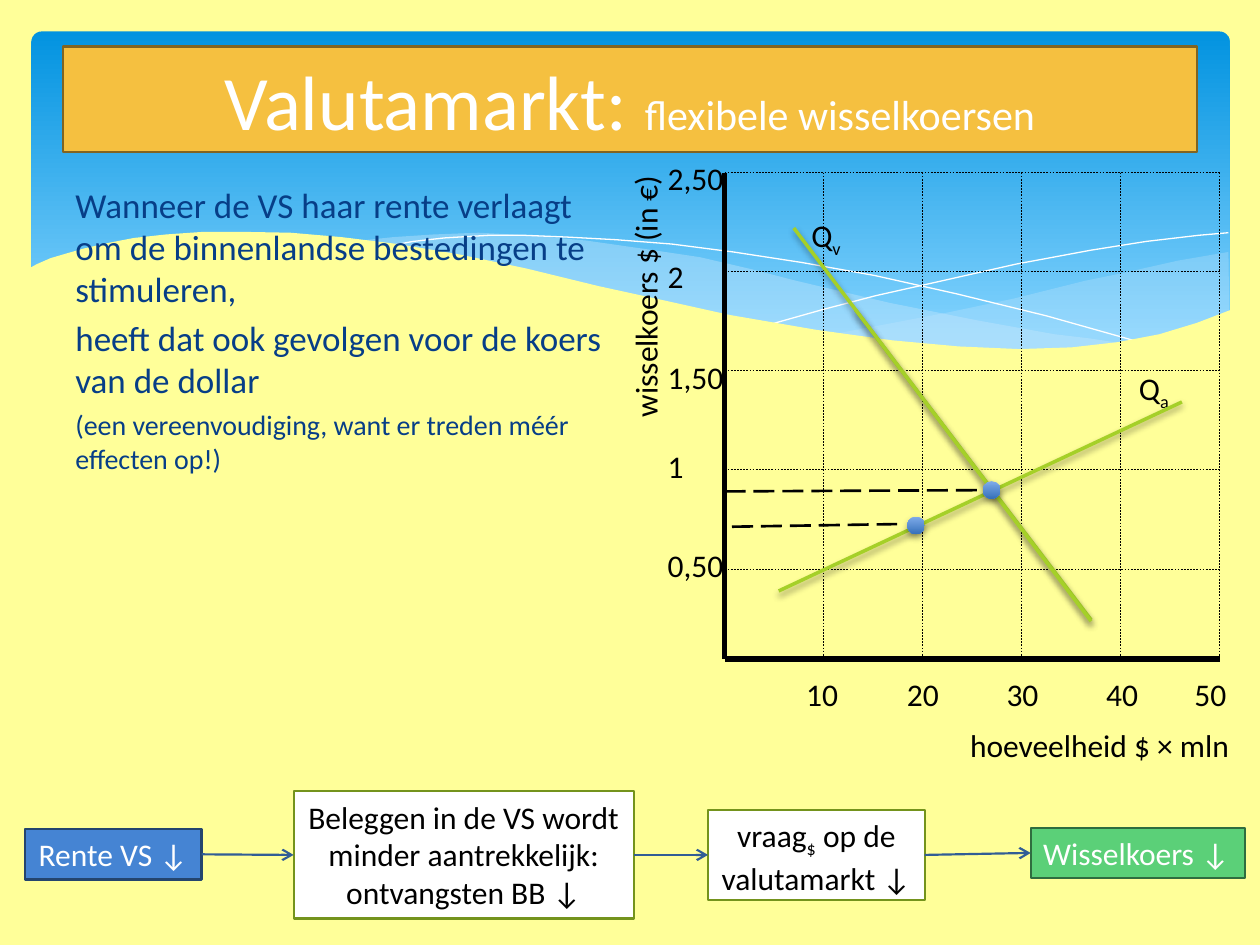
from pptx import Presentation
from pptx.util import Pt
from pptx.dml.color import RGBColor
from pptx.enum import dml, shapes, text
from pptx.oxml import ns
from lxml import etree


class Theme:
    font = "Calibri"
    back, sky, pale, mist = "FFFF99", "0293E0", "83D3FE", "C6E7FC"
    gold, brown, navy = "F5C040", "806421", "073E87"
    black, white, lime, olive = "000000", "FFFFFF", "A5D028", "74931C"
    blue, ink, green, moss = "4584D3", "24456E", "5BD078", "2F6D3F"
    arrow, light, deep = "315D95", "80ACEA", "3570BA"
    head, sub, body, label, note = 44, 24, 20, 18, 16


def write(shape, paras, size=Theme.label, color=Theme.black, align="LEFT", space=0,
          wrap=False, fit=True, anchor="TOP"):
    frame = shape.text_frame
    frame.word_wrap = wrap
    frame.auto_size = text.MSO_AUTO_SIZE.SHAPE_TO_FIT_TEXT if fit else text.MSO_AUTO_SIZE.NONE
    frame.vertical_anchor = getattr(text.MSO_ANCHOR, anchor)
    for i, runs in enumerate(paras):
        para = frame.add_paragraph() if i else frame.paragraphs[0]
        para.alignment = getattr(text.PP_ALIGN, align)
        para.space_before = Pt(space if i else 0)
        for part in [runs] if isinstance(runs, str) else runs:
            words, opts = (part, {}) if isinstance(part, str) else part
            run = para.add_run()
            run.text = words
            run.font.name = Theme.font
            run.font.size = Pt(opts.get("size", size))
            run.font.color.rgb = RGBColor.from_string(color)
            if "base" in opts:
                run._r.get_or_add_rPr().set("baseline", str(opts["base"] * 1000))


def stroke(start, end, color, width, dash=None):
    line = slide.shapes.add_connector(shapes.MSO_CONNECTOR.STRAIGHT, *map(Pt, start + end))
    line.line.color.rgb = RGBColor.from_string(color)
    line.line.width = Pt(width)
    if dash:
        line.line.dash_style = dash
    etree.SubElement(line.element.spPr, ns.qn("a:effectLst"))
    return line


deck = Presentation()
deck.slide_width, deck.slide_height = Pt(720), Pt(540)
slide = deck.slides.add_slide(deck.slide_layouts[5])
slide.background.fill.solid()
slide.background.fill.fore_color.rgb = RGBColor.from_string(Theme.back)

sky = slide.shapes.add_shape(shapes.MSO_SHAPE.ROUNDED_RECTANGLE, Pt(18), Pt(18), Pt(684.7), Pt(194.4))
sky.adjustments[0] = 0.03
sky.shadow.inherit = False
sky.line.fill.background()
sky.fill.gradient()
sky.fill.gradient_angle = 270
for stop, color, place in zip(sky.fill.gradient_stops, (Theme.sky, Theme.pale), (0, 0.9)):
    stop.color.rgb = RGBColor.from_string(color)
    stop.position = place

waves = [
    (Theme.mist, 29, [
        (702, 144), (673, 149), (642, 156), (620, 160.5), (580, 170.5), (542, 178.5), (508, 185),
        (476, 191), (497, 193.5), (527, 197), (554, 199), (578, 200), (601, 199.5), (621, 198),
        (640, 196), (657, 193), (673, 189.5), (683, 186.5), (693, 181.5), (702.5, 178)]),
    (Theme.mist, 40, [
        (643, 196.5), (623.5, 193.5), (602.5, 191), (558, 183), (508, 173), (453, 160), (430, 154),
        (400, 147), (370, 142.5), (335, 137.5), (302, 134.5), (273.5, 133), (248, 134),
        (225, 135.5), (206, 137.5), (233, 141), (261, 146), (291, 152), (323, 160), (353.5, 167),
        (381.5, 173), (420.5, 181), (456.5, 188), (490, 193), (521, 197), (548, 199.5),
        (573, 200), (596, 200), (617, 199.5), (637, 197.5)]),
    (None, 0, [
        (222.5, 140.5), (236, 138), (254, 136), (279, 134.5), (300, 134.5), (324, 135.5),
        (352, 137), (384, 139.5), (419, 144), (458, 150), (500, 157.5), (547, 168),
        (598, 180.5), (653, 196)]),
    (None, 0, [
        (441.5, 185), (470, 177), (500.5, 169), (538.5, 160.5), (580.5, 151), (623.5, 143),
        (655, 138), (685, 134.5), (702, 133)]),
    (Theme.back, 100, [
        (703.5, 177), (684, 184.5), (662.5, 191), (639, 195.5), (612.5, 198.5), (582.5, 199.5),
        (548, 198), (510, 194.5), (466.5, 188.5), (417, 180), (381, 172), (342, 163.5),
        (301, 153.5), (263, 145.5), (227.5, 139.5), (195, 135.5), (166, 133), (139, 132.5),
        (116, 132.5), (95, 134), (76.5, 136), (61, 139), (48, 142), (37.5, 145), (29, 147.5),
        (21, 151), (16.5, 153.5), (16.5, 237), (703.5, 237)]),
]
for color, alpha, spots in waves:
    spots = [(Pt(x), Pt(y)) for x, y in spots]
    pen = slide.shapes.build_freeform(*spots[0])
    pen.add_line_segments(spots[1:], close=bool(color))
    wave = pen.convert_to_shape()
    wave.shadow.inherit = False
    if color:
        wave.line.fill.background()
        wave.fill.solid()
        wave.fill.fore_color.rgb = RGBColor.from_string(color)
        tint = wave.element.spPr.find(ns.qn("a:solidFill"))[0]
        etree.SubElement(tint, ns.qn("a:alpha"), val=str(alpha * 1000))
    else:
        wave.fill.background()
        wave.line.color.rgb = RGBColor.from_string(Theme.white)
        wave.line.width = Pt(0)

title = slide.shapes.title
slide.shapes.element.append(title.element)
title.left, title.top, title.width, title.height = Pt(36), Pt(26.6), Pt(648), Pt(60.5)
title.fill.solid()
title.fill.fore_color.rgb = RGBColor.from_string(Theme.gold)
title.line.color.rgb = RGBColor.from_string(Theme.brown)
title.line.width = Pt(1.25)
write(title, [["Valutamarkt: ", ("flexibele wisselkoersen", {"size": Theme.sub})]],
      size=Theme.head, color=Theme.white, align="CENTER", wrap=True, fit=False, anchor="MIDDLE")

story = slide.shapes.add_textbox(Pt(36), Pt(101.5), Pt(318.2), Pt(339))
write(story, ["Wanneer de VS haar rente verlaagt om de binnenlandse bestedingen te stimuleren,",
              "heeft dat ook gevolgen voor de koers van de dollar",
              [("(een vereenvoudiging, want er treden méér effecten op!)", {"size": Theme.note})]],
      size=Theme.body, color=Theme.navy, space=4, wrap=True, fit=False)

left, right, top, base, step = 414, 697, 98.6, 376.6, 56.6
stroke((left, top), (left, base), Theme.black, 3)
stroke((right, base), (left, base), Theme.black, 3)
for i in range(5):
    y, x = top + i * step, left + (i + 1) * step
    stroke((left, y), (right, y), Theme.black, 0.25, dml.MSO_LINE.DASH)
    stroke((x, top), (x, base), Theme.black, 0.25, dml.MSO_LINE.DASH)

labels = [("hoeveelheid $ × mln", 547.2, 411.1, 164.9, 0),
          ("wisselkoers $ (in €)", 291.6, 154.1, 154.1, 270),
          (["Q", ("v", {"base": -25})], 456.5, 120.2, 32.4, 0),
          (["Q", ("a", {"base": -25})], 643.7, 207.4, 32.4, 0)]
labels += [(word, 374.4, y, 46.8 if "," in word else 23.8, 0) for word, y in
           zip(("2,50", "2", "1,50", "1", "0,50"), (87.1, 143.3, 200.9, 252, 308.2))]
labels += [(str(10 * i), x, 382.3, 33.1, 0) for i, x in
           enumerate((453.6, 511.2, 568.1, 625, 675.4), 1)]
for words, x, y, width, turn in labels:
    label = slide.shapes.add_textbox(Pt(x), Pt(y), Pt(width), Pt(28.8))
    label.rotation = turn
    write(label, [words])

steps = [
    (14.4, 473.8, 100.8, 28.8, Theme.blue, Theme.ink, Theme.white, "CENTER", ["Rente VS ↓"]),
    (167.8, 452.2, 194.4, 72.7, Theme.white, Theme.olive, Theme.black, "CENTER",
     ["Beleggen in de VS wordt", "minder aantrekkelijk:", "ontvangsten BB ↓"]),
    (404.6, 463, 123.8, 51.1, Theme.white, Theme.olive, Theme.black, "CENTER",
     [["vraag", ("$", {"base": -25}), " op de"], "valutamarkt ↓"]),
    (589, 473, 122.4, 28.8, Theme.green, Theme.moss, Theme.white, "LEFT", ["Wisselkoers ↓"]),
]
last = None
for x, y, width, height, fill, edge, color, align, paras in steps:
    box = slide.shapes.add_shape(shapes.MSO_SHAPE.RECTANGLE, Pt(x), Pt(y), Pt(width), Pt(height))
    box.shadow.inherit = False
    box.fill.solid()
    box.fill.fore_color.rgb = RGBColor.from_string(fill)
    box.line.color.rgb = RGBColor.from_string(edge)
    box.line.width = Pt(1.25)
    write(box, paras, color=color, align=align)
    if last:
        link = stroke((0, 0), (0, 0), Theme.arrow, 1.25)
        link.begin_connect(last, 3)
        link.end_connect(box, 1)
        etree.SubElement(link.line._get_or_add_ln(), ns.qn("a:tailEnd"), type="arrow")
    last = box

raised = [stroke(start, end, Theme.lime, 2) for start, end in (
    ((445, 337.7), (675.4, 229.7)),
    ((488.9, 177.1), (623.5, 354.2)),
    ((453.6, 130.3), (623.5, 355)))]
for start, end in (((414, 280.8), (558.7, 280.1)), ((418.3, 301), (512.6, 299.5))):
    stroke(start, end, Theme.black, 1.5, dml.MSO_LINE.LONG_DASH)
for x, y in ((518.4, 295.2), (561.6, 275)):
    dot = slide.shapes.add_shape(shapes.MSO_SHAPE.OVAL, Pt(x), Pt(y), Pt(10.1), Pt(10.1))
    dot.shadow.inherit = False
    dot.line.fill.background()
    dot.fill.gradient()
    dot.fill.gradient_angle = 270
    for stop, color in zip(dot.fill.gradient_stops, (Theme.light, Theme.deep)):
        stop.color.rgb = RGBColor.from_string(color)
    raised.append(dot)
for item in raised:
    shade = etree.SubElement(item.element.spPr.find(ns.qn("a:effectLst")), ns.qn("a:outerShdw"),
                             blurRad=str(Pt(4)), dist=str(Pt(2)), dir="5400000", rotWithShape="0")
    tint = etree.SubElement(shade, ns.qn("a:srgbClr"), val=Theme.black)
    etree.SubElement(tint, ns.qn("a:alpha"), val="38000")

deck.save("out.pptx")
